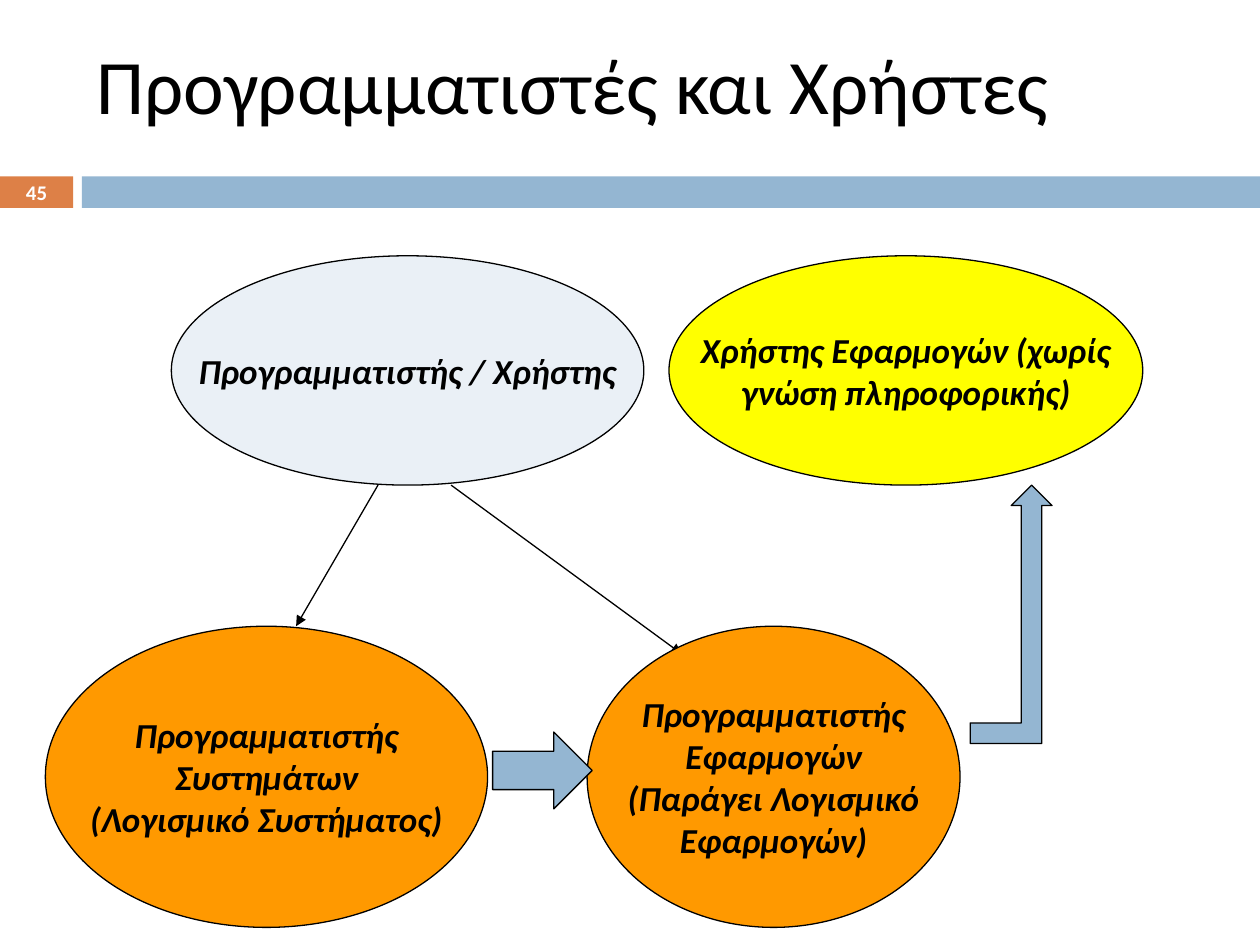
from lxml import etree
from pptx import Presentation
from pptx.dml.color import RGBColor
from pptx.enum.shapes import MSO_CONNECTOR, MSO_SHAPE
from pptx.enum.text import MSO_ANCHOR, PP_ALIGN
from pptx.oxml.ns import qn
from pptx.util import Inches, Pt

RECTANGLE = MSO_SHAPE.RECTANGLE
OVAL = MSO_SHAPE.OVAL
BENT_UP_ARROW = MSO_SHAPE.BENT_UP_ARROW
RIGHT_ARROW = MSO_SHAPE.RIGHT_ARROW
STRAIGHT = MSO_CONNECTOR.STRAIGHT
MIDDLE = MSO_ANCHOR.MIDDLE
LEFT = PP_ALIGN.LEFT
CENTER = PP_ALIGN.CENTER

COLORS = {
    "black": "000000",
    "white": "FFFFFF",
    "accent": "DD8047",
    "blue": "94B6D2",
    "pale": "EAF0F6",
    "yellow": "FFFF00",
    "orange": "FF9900",
}
TITLE_FORMAT = {"size": Pt(44)}
NUMBER_FORMAT = {"size": Pt(11.9), "bold": True}
ROLE_FORMAT = {"size": Pt(20), "bold": True, "italic": True}

ROLES = [
    ((5.31, 2.03, 3.76, 1.82), "yellow",
     ["Χρήστης Εφαρμογών (χωρίς", "γνώση πληροφορικής)"]),
    ((0.36, 4.97, 3.51, 2.39), "orange",
     ["Προγραμματιστής", "Συστημάτων", "(Λογισμικό Συστήματος)"]),
    ((1.36, 2.03, 3.75, 1.82), "pale", ["Προγραμματιστής / Χρήστης"]),
    ((4.66, 4.97, 2.96, 2.39), "orange",
     ["Προγραμματιστής", "Εφαρμογών", "(Παράγει Λογισμικό", "Εφαρμογών)"]),
]
BRANCHES = [(3, 3.85, 2.35, 4.97), (3.58, 3.85, 5.41, 5.19)]
BLOCK_ARROWS = [
    (BENT_UP_ARROW, (7.7, 3.85, 0.65, 2.05)),
    (RIGHT_ARROW, (3.91, 5.81, 0.79, 0.61)),
]


def color(name):
    return RGBColor.from_string(COLORS[name])


def inches(values):
    return [Inches(value) for value in values]


def write_text(shape, lines, text_format, color_name, alignment, wrap):
    frame = shape.text_frame
    frame.word_wrap = wrap
    frame.vertical_anchor = MIDDLE
    frame.text = "\n".join(lines)
    for paragraph in frame.paragraphs:
        paragraph.alignment = alignment
        font = paragraph.runs[0].font
        font.name = "Calibri"
        font.color.rgb = color(color_name)
        for attribute, value in text_format.items():
            setattr(font, attribute, value)


def add_filled_shape(slide, kind, box, fill, outlined):
    shape = slide.shapes.add_shape(kind, *inches(box))
    shape.shadow.inherit = False
    shape.fill.solid()
    shape.fill.fore_color.rgb = color(fill)
    if outlined:
        shape.line.color.rgb = color("black")
        shape.line.width = Pt(0.75)
    else:
        shape.line.fill.background()
    return shape


def add_branch(slide, ends):
    connector = slide.shapes.add_connector(STRAIGHT, *inches(ends))
    connector.line.color.rgb = color("black")
    connector.line.width = Pt(0.75)
    line = connector.line._get_or_add_ln()
    etree.SubElement(line, qn("a:tailEnd"), type="triangle")
    etree.SubElement(connector._element.spPr, qn("a:effectLst"))


def add_title(slide, box):
    title = slide.shapes.add_textbox(*inches(box))
    write_text(title, ["Προγραμματιστές και Χρήστες"], TITLE_FORMAT, "black", LEFT, True)


def add_band(slide, box, number):
    left, top, width, height = box
    number_width, gap = 0.58, 0.07
    bar_left = left + number_width + gap
    number_box = (left, top, number_width, height)
    bar_box = (bar_left, top, left + width - bar_left, height)
    number_shape = add_filled_shape(slide, RECTANGLE, number_box, "accent", False)
    add_filled_shape(slide, RECTANGLE, bar_box, "blue", False)
    write_text(number_shape, [number], NUMBER_FORMAT, "white", CENTER, True)


def add_diagram(slide, box):
    origin_left, origin_top, _, _ = box

    def place(left, top, width, height):
        return origin_left + left, origin_top + top, width, height

    for start_x, start_y, end_x, end_y in BRANCHES:
        add_branch(slide, (origin_left + start_x, origin_top + start_y,
                           origin_left + end_x, origin_top + end_y))
    for role_box, fill, lines in ROLES:
        ellipse = add_filled_shape(slide, OVAL, place(*role_box), fill, True)
        write_text(ellipse, lines, ROLE_FORMAT, "black", CENTER, False)
    for kind, arrow_box in BLOCK_ARROWS:
        add_filled_shape(slide, kind, place(*arrow_box), "blue", True)


def main():
    presentation = Presentation()
    presentation.slide_width = Inches(10)
    presentation.slide_height = Inches(7.5)
    slide = presentation.slides.add_slide(presentation.slide_layouts[6])
    add_title(slide, (0.67, 0, 9.33, 1.33))
    add_band(slide, (0, 1.4, 10, 0.25), "45")
    add_diagram(slide, (0, 0, 10, 7.5))
    presentation.save("out.pptx")


if __name__ == "__main__":
    main()
